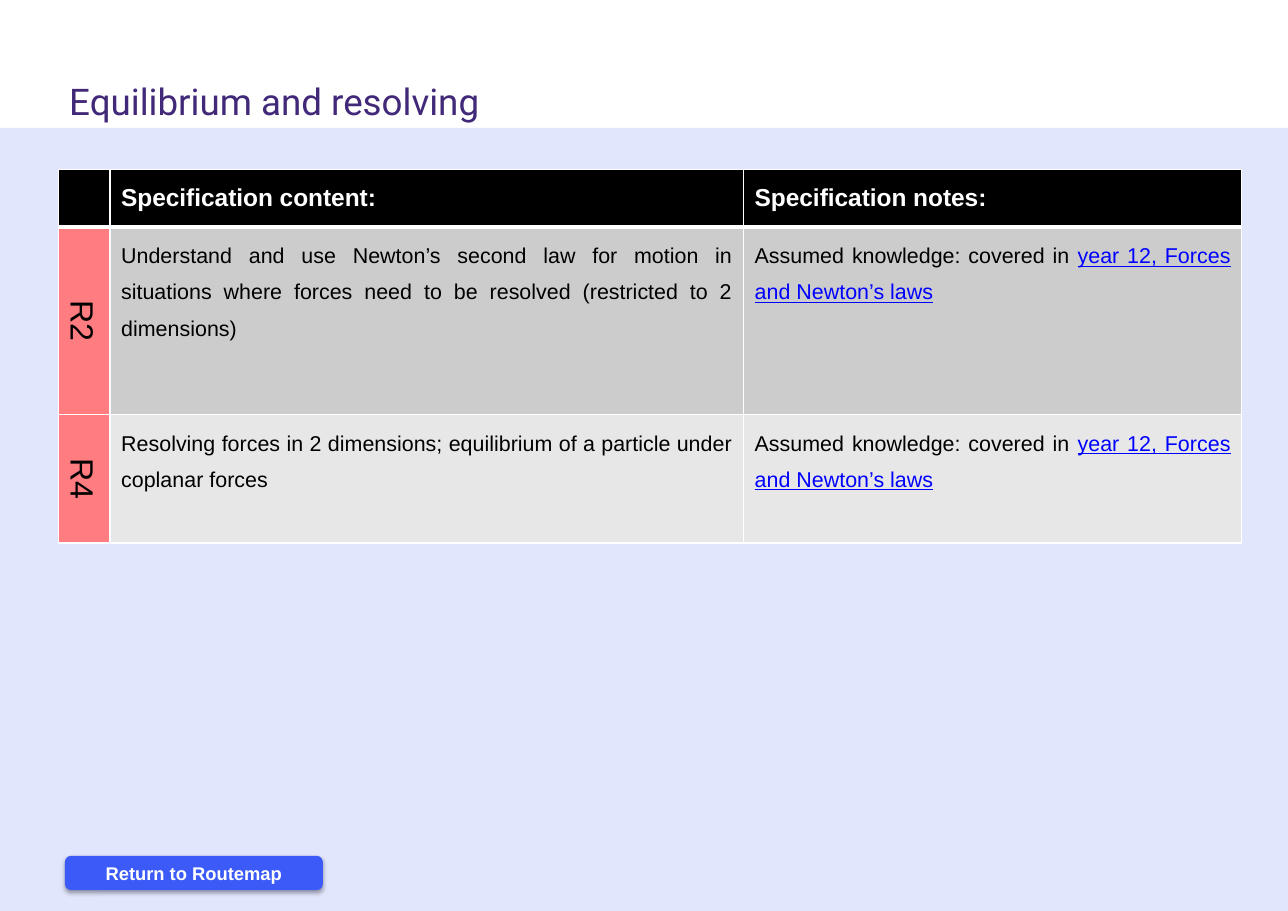
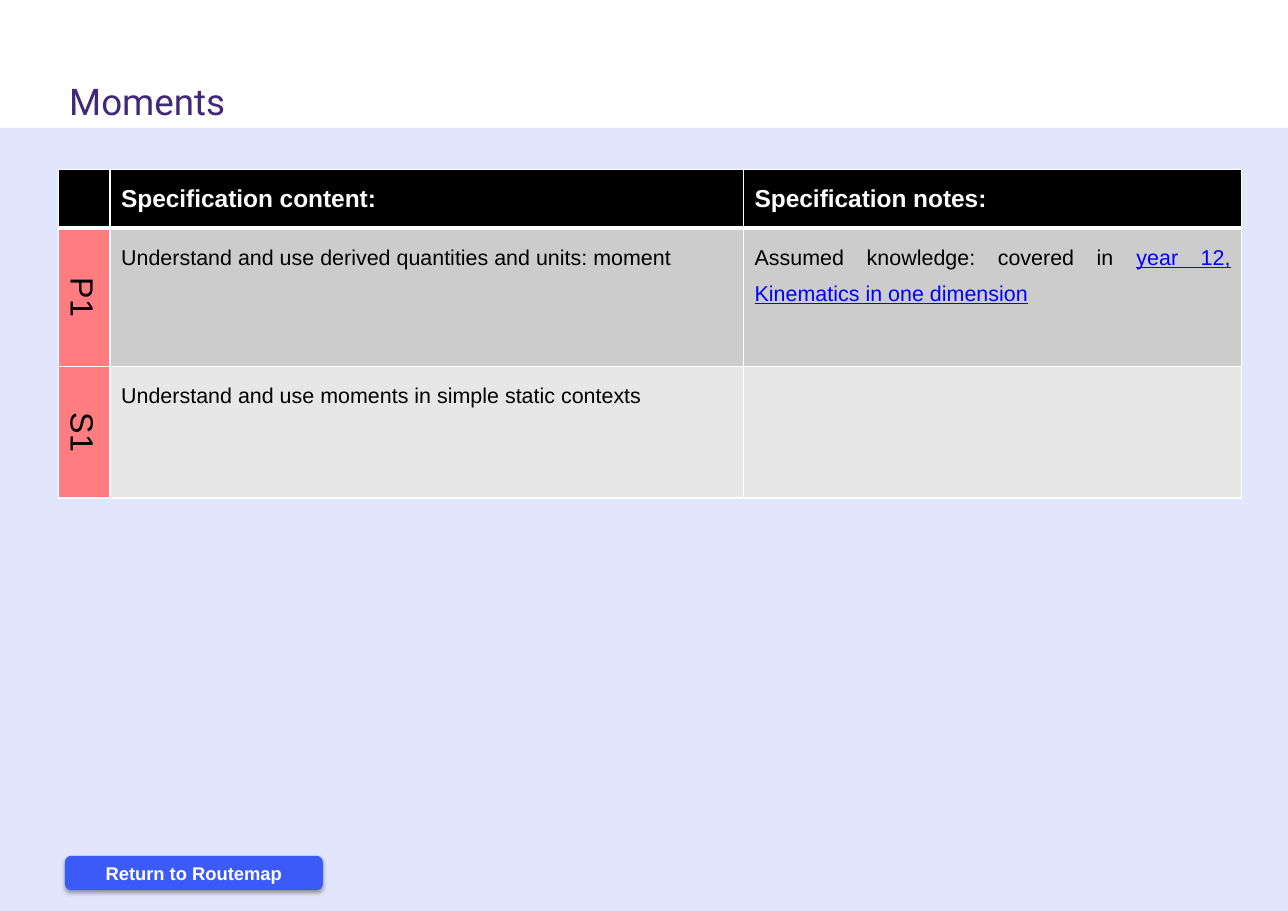
from lxml.etree import SubElement
from pptx import Presentation
from pptx.dml.color import RGBColor
from pptx.enum.shapes import MSO_SHAPE
from pptx.enum.text import MSO_ANCHOR, PP_ALIGN
from pptx.oxml import parse_xml
from pptx.oxml.ns import nsdecls, qn
from pptx.util import Pt

PX = 9144  # 100 px to the inch
WHITE = RGBColor(0xFF, 0xFF, 0xFF)
BLACK = RGBColor(0x00, 0x00, 0x00)
BLUE = RGBColor(0x3B, 0x5A, 0xF7)
PURPLE = RGBColor(0x41, 0x28, 0x78)
LINK = RGBColor(0x00, 0x00, 0xFF)
CODE_FILL = RGBColor(0xFF, 0x7C, 0x80)
ROW_FILLS = [BLACK, RGBColor(0xCC, 0xCC, 0xCC), RGBColor(0xE7, 0xE7, 0xE7)]

COLUMNS = [47, 575, 452]
HEADER = ["", "Specification content:", "Specification notes:"]
ASSUMED = "Assumed knowledge: covered in "
SLIDES = [
    ("Equilibrium and resolving", [52, 170, 117], [
        ("R2", "Understand and use Newton’s second law for motion in situations "
               "where forces need to be resolved (restricted to 2 dimensions)",
         "year 12, Forces and Newton’s laws"),
        ("R4", "Resolving forces in 2 dimensions; equilibrium of a particle "
               "under coplanar forces",
         "year 12, Forces and Newton’s laws"),
    ]),
    ("Moments", [53, 126, 119], [
        ("P1", "Understand and use derived quantities and units: moment",
         "year 12, Kinematics in one dimension"),
        ("S1", "Understand and use moments in simple static contexts", ""),
    ]),
]
SHADOW = (f'<a:effectLst {nsdecls("a")}><a:outerShdw blurRad="{Pt(3.1)}" '
          f'dist="{Pt(1.8)}" dir="5400000" algn="t" rotWithShape="0">'
          '<a:srgbClr val="000000"><a:alpha val="35000"/></a:srgbClr>'
          '</a:outerShdw></a:effectLst>')


def write(frame, text, link="", size=14, font="Arial", color=BLACK, bold=False,
          align=PP_ALIGN.LEFT, spacing=1.0):
    para = frame.paragraphs[0]
    para.alignment = align
    para.line_spacing = spacing
    for words, ink in ((text, color), (link, LINK)):
        if words:
            span = para.add_run()
            span.text = words
            span.font.size = Pt(size)
            span.font.name = font
            span.font.bold = bold
            span.font.underline = words == link
            span.font.color.rgb = ink


def style_cell(cell, fill, top, bottom):
    properties = cell._tc.get_or_add_tcPr()
    for side, width in (("L", 1), ("R", 1), ("T", top), ("B", bottom)):
        properties.append(parse_xml(
            f'<a:ln{side} {nsdecls("a")} w="{Pt(width)}"><a:solidFill>'
            f'<a:srgbClr val="{WHITE}"/></a:solidFill></a:ln{side}>'))
    cell.fill.solid()
    cell.fill.fore_color.rgb = fill


deck = Presentation()
deck.slide_width = 1169 * PX
deck.slide_height = 827 * PX

for title, heights, entries in SLIDES:
    slide = deck.slides.add_slide(deck.slide_layouts[6])
    shapes = slide.shapes

    # Tinted band and return button
    band = shapes.add_shape(MSO_SHAPE.RECTANGLE, 0, 116 * PX, 1169 * PX, 711 * PX)
    button = shapes.add_shape(MSO_SHAPE.ROUNDED_RECTANGLE,
                              59 * PX, 777 * PX, 234 * PX, 31 * PX)
    for shape in (band, button):
        shape.shadow.inherit = False
        shape.fill.solid()
        shape.fill.fore_color.rgb = BLUE
        shape.line.fill.background()
    tint = band._element.spPr.find(qn("a:solidFill"))[0]
    SubElement(tint, qn("a:alpha")).set("val", "15000")
    effects = button._element.spPr.find(qn("a:effectLst"))
    effects.getparent().replace(effects, parse_xml(SHADOW))
    button.text_frame.vertical_anchor = MSO_ANCHOR.MIDDLE
    write(button.text_frame, "Return to Routemap", size=12, color=WHITE,
          bold=True, align=PP_ALIGN.CENTER)

    # Specification table
    table = shapes.add_table(len(heights), len(COLUMNS), 53 * PX, 154 * PX,
                             sum(COLUMNS) * PX, sum(heights) * PX).table
    table.first_row = table.horz_banding = False
    for column, width in zip(table.columns, COLUMNS):
        column.width = width * PX
    for index, height in enumerate(heights):
        table.rows[index].height = height * PX
        for number, cell in enumerate(table.rows[index].cells):
            fill = CODE_FILL if index and number == 0 else ROW_FILLS[index]
            style_cell(cell, fill, 3 if index == 1 else 1, 1 if index else 3)

    for cell, heading in zip(table.rows[0].cells, HEADER):
        cell.vertical_anchor = MSO_ANCHOR.MIDDLE
        write(cell.text_frame, heading, size=16, color=WHITE, bold=True)

    for index, (code, content, link) in enumerate(entries, 1):
        code_cell, content_cell, notes_cell = table.rows[index].cells
        code_cell._tc.get_or_add_tcPr().set("vert", "vert")
        write(code_cell.text_frame, code, size=21, align=PP_ALIGN.CENTER)
        write(content_cell.text_frame, content, align=PP_ALIGN.JUSTIFY, spacing=1.5)
        write(notes_cell.text_frame, ASSUMED if link else "", link,
              align=PP_ALIGN.JUSTIFY, spacing=1.5)

    # Title
    box = shapes.add_textbox(53 * PX, 67 * PX, 569 * PX, 50 * PX)
    box.text_frame.word_wrap = True
    write(box.text_frame, title, size=24, font="Roboto", color=PURPLE)

deck.save("out.pptx")
